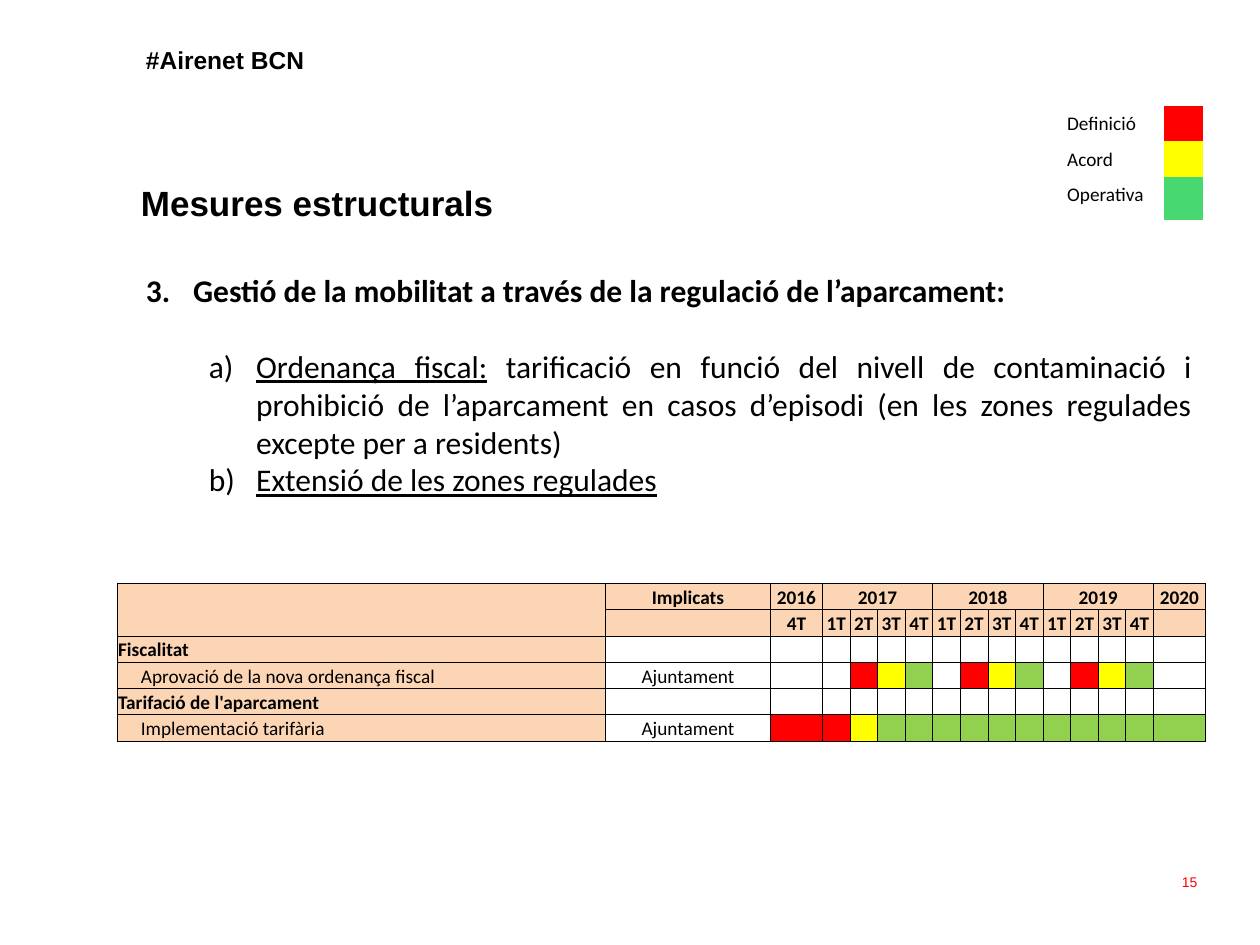
from lxml import etree
from pptx import Presentation
from pptx import util as u
from pptx.dml.color import RGBColor
from pptx.enum import text as t
from pptx.oxml.ns import qn

Pt = u.Pt
PEACH, RED, YELLOW, GREEN, MINT = "FCD5B4", "FF0000", "FFFF00", "92D050", "47D872"
LEFT, MID, RIGHT, JUST = (t.PP_ALIGN.LEFT, t.PP_ALIGN.CENTER,
                          t.PP_ALIGN.RIGHT, t.PP_ALIGN.JUSTIFY)


def color(code):
    """Turn a hex string into a colour."""
    return RGBColor.from_string(code)


def style(par, size, face="Calibri", bold=False, tint="000000", align=LEFT):
    """Set the font and alignment of a paragraph."""
    par.alignment = align
    font = par.font
    font.size, font.name, font.bold = Pt(size), face, bold
    font.color.rgb = color(tint)
    if not par.runs:
        etree.SubElement(par._p, qn("a:endParaRPr"), sz=str(size * 100))


def frame(slide, box):
    """Add a wrapping text box and return its text frame."""
    area = slide.shapes.add_textbox(*map(Pt, box)).text_frame
    area.word_wrap = True
    return area


def label(slide, box, words, size, lead=None, **look):
    """Place one line of Arial text in a box."""
    area = frame(slide, box)
    par = area.paragraphs[0]
    par.text = words
    if lead:
        par.line_spacing = Pt(lead)
    else:
        area.vertical_anchor = t.MSO_ANCHOR.MIDDLE
    style(par, size, "Arial", **look)


def number(par, kind, left, start=1):
    """Give a paragraph a hanging automatic number."""
    props = par._p.get_or_add_pPr()
    props.set("marL", str(Pt(left)))
    props.set("indent", str(Pt(-27)))
    etree.SubElement(props, qn("a:buAutoNum"), type=kind, startAt=str(start))


def body(slide, box):
    """Place the numbered heading and its two lettered points."""
    area = frame(slide, box)
    head = area.paragraphs[0]
    head.text = "Gestió de la mobilitat a través de la regulació de l’aparcament:"
    number(head, "arabicPeriod", 27, 3)
    style(head, 18, bold=True, align=JUST)
    points = [
        ("Ordenança fiscal:", " tarificació en funció del nivell de contaminació i "
         "prohibició de l’aparcament en casos d’episodi (en les zones regulades "
         "excepte per a residents)", 22),
        ("Extensió de les zones regulades", "", 0),
    ]
    for term, rest, gap in points:
        par = area.add_paragraph()
        par.level = 1
        number(par, "alphaLcParenR", 63)
        run = par.add_run()
        run.text = term
        run.font.underline = True
        if rest:
            par.add_run().text = rest
        par.space_before = Pt(gap)
        style(par, 18, align=JUST)


def grid(slide, box, cols, rows):
    """Add a plain table with the given column widths and row heights."""
    shape = slide.shapes.add_table(len(rows), len(cols), *map(Pt, box))
    table = shape.table
    table.first_row = table.horz_banding = False
    table._tbl.tblPr.find(qn("a:tableStyleId")).text = (
        "{2D5ABB26-0587-4C30-8999-92F81FD0307C}")
    for col, width in zip(table.columns, cols):
        col.width = Pt(width)
    for row, height in zip(table.rows, rows):
        row.height = Pt(height)
    return table


def paint(cell, tint):
    """Fill a cell, or leave it clear."""
    if tint:
        cell.fill.solid()
        cell.fill.fore_color.rgb = color(tint)
    else:
        cell.fill.background()


def legend(slide, box):
    """Place the key of phases and their colours."""
    table = grid(slide, box, [62.6, 22.4], [18, 18, 24.5])
    keys = [("Definició", RED), ("Acord", YELLOW), ("Operativa", MINT)]
    for row, (words, tint) in enumerate(keys):
        name, chip = table.cell(row, 0), table.cell(row, 1)
        name.text = words
        paint(name, None)
        paint(chip, tint)
        for cell in (name, chip):
            style(cell.text_frame.paragraphs[0], 11)


def edge(cell):
    """Draw thin black borders round a cell."""
    props = cell._tc.get_or_add_tcPr()
    for side in ("a:lnL", "a:lnR", "a:lnT", "a:lnB"):
        line = etree.SubElement(props, qn(side), w=str(Pt(0.5)))
        fill = etree.SubElement(line, qn("a:solidFill"))
        etree.SubElement(fill, qn("a:srgbClr"), val="000000")


def plan(slide, box):
    """Place the schedule of measures by quarter."""
    table = grid(slide, box, [279, 94.3, 29.7] + [15.77] * 12 + [29.7], [15] * 6)
    years = [y for n in (2017, 2018, 2019) for y in (str(n), "", "", "")]
    terms = ["1T", "2T", "3T", "4T"] * 3
    words = [
        ["", "Implicats", "2016"] + years + ["2020"],
        ["", "", "4T"] + terms + [""],
        ["Fiscalitat"],
        ["Aprovació de la nova ordenança fiscal", "Ajuntament"],
        ["Tarifació de l'aparcament"],
        ["Implementació tarifària", "Ajuntament"],
    ]
    cycle = [None, RED, YELLOW, GREEN]
    phases = {3: [None] + cycle * 3 + [None],
              5: [RED, RED, YELLOW] + [GREEN] * 11}
    for row, line in enumerate(words):
        for col in range(16):
            cell = table.cell(row, col)
            cell.text = line[col] if col < len(line) else ""
            task = row in phases
            cell.margin_left = Pt(13.5 if task and col == 0 else 0.5)
            cell.margin_right = cell.margin_top = Pt(0.5)
            cell.margin_bottom = 0
            cell.vertical_anchor = t.MSO_ANCHOR.BOTTOM
            edge(cell)
            if row < 2 or col == 0:
                paint(cell, PEACH)
            else:
                paint(cell, phases[row][col - 2] if task and col > 1 else None)
            style(cell.text_frame.paragraphs[0], 11, bold=not task,
                  align=MID if col else LEFT)
    table.cell(0, 0).merge(table.cell(1, 0))
    for col in (3, 7, 11):
        table.cell(0, col).merge(table.cell(0, col + 3))


def main():
    """Build the slide and save it."""
    deck = Presentation()
    deck.slide_width, deck.slide_height = Pt(720), Pt(540)
    slide = deck.slides.add_slide(deck.slide_layouts[6])
    label(slide, (76.3, 15, 338, 68), "#Airenet BCN", 14, 24, bold=True)
    label(slide, (73.4, 100, 292, 32), "Mesures estructurals", 20, 24, bold=True)
    label(slide, (523.4, 489.6, 168, 29), "15", 8, tint=RED, align=RIGHT)
    body(slide, (76.3, 151.2, 612, 138))
    legend(slide, (602.6, 60.3, 85, 60.5))
    plan(slide, (67, 333.4, 622, 90))
    deck.save("out.pptx")


if __name__ == "__main__":
    main()
